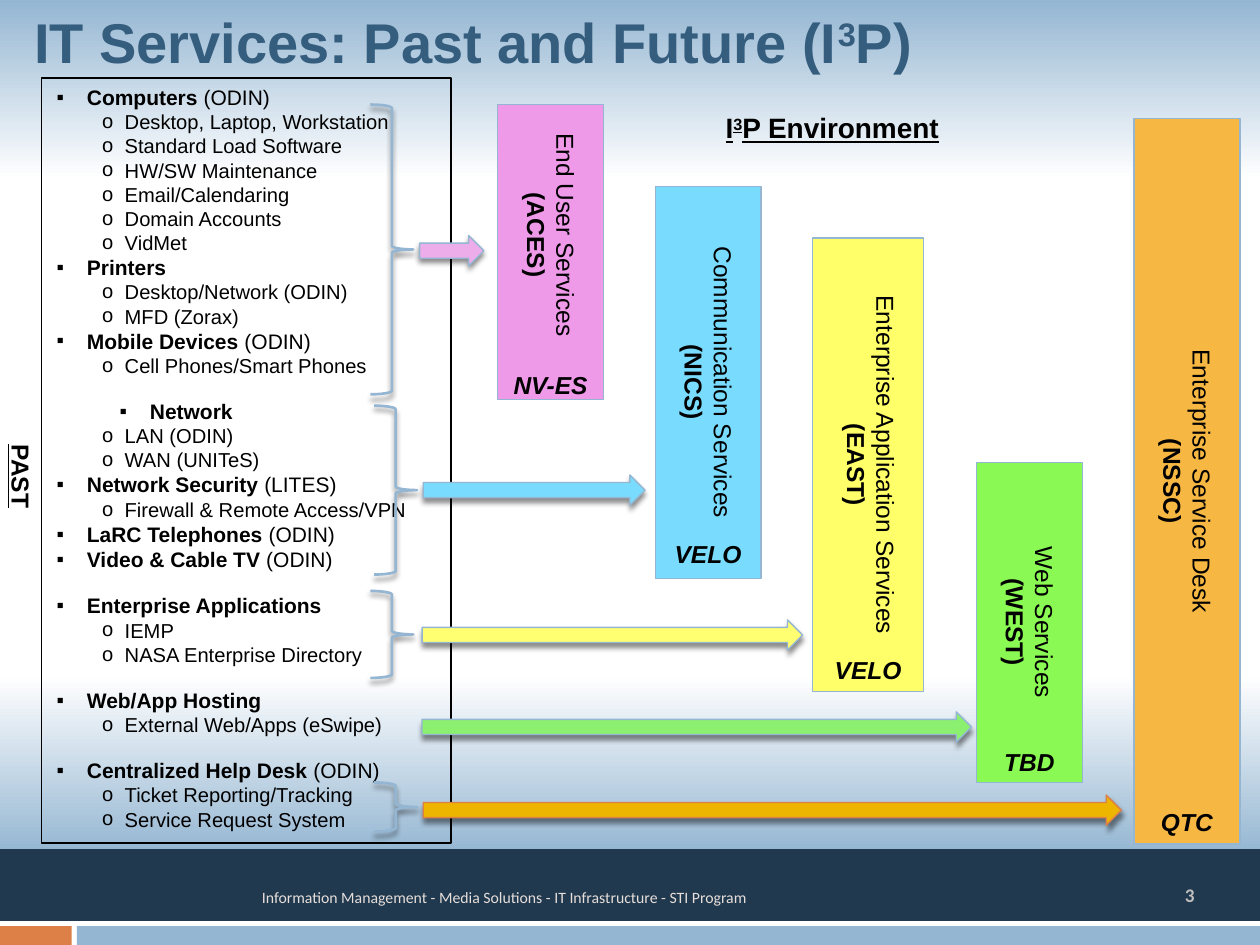
from pptx import Presentation
from pptx.dml.color import RGBColor
from pptx.enum.shapes import MSO_SHAPE as Shape
from pptx.enum.text import MSO_ANCHOR as Anchor, MSO_AUTO_SIZE as AutoSize, PP_ALIGN as Align
from pptx.oxml import parse_xml
from pptx.oxml.ns import nsdecls, qn
from pptx.util import Inches, Pt

BLUE, ORANGE, NAVY, BLACK = "94B6D2", "DD8047", "20394E", "000000"

# (heading left margin, [(heading, former provider, [services])])
PAST_GROUPS = [
    (0.26, [
        ("Computers", "(ODIN)", ["Desktop, Laptop, Workstation", "Standard Load Software",
                                 "HW/SW Maintenance", "Email/Calendaring",
                                 "Domain Accounts", "VidMet"]),
        ("Printers", "", ["Desktop/Network (ODIN)", "MFD (Zorax)"]),
        ("Mobile Devices", "(ODIN)", ["Cell Phones/Smart Phones"]),
    ]),
    (0.76, [("Network", "", ["LAN (ODIN)", "WAN (UNITeS)"])]),
    (0.26, [
        ("Network Security", "(LITES)", ["Firewall & Remote Access/VPN"]),
        ("LaRC Telephones", "(ODIN)", []),
        ("Video & Cable TV", "(ODIN)", []),
    ]),
    (0.26, [("Enterprise Applications", "", ["IEMP", "NASA Enterprise Directory"])]),
    (0.26, [("Web/App Hosting", "", ["External Web/Apps (eSwipe)"])]),
    (0.26, [("Centralized Help Desk", "(ODIN)",
             ["Ticket Reporting/Tracking", "Service Request System"])]),
]
CONTINUED = "Network Security"  # follows the group above without a gap

# (box, fill, service, acronym, provider, provider top above panel bottom, right margin)
PANELS = [
    ((3.95, 0.83, 0.84, 2.34), "EE9AE8", "End User Services", "(ACES)", "NV-ES", 0.28, 0.27),
    ((5.2, 1.48, 0.84, 3.11), "79DCFF", "Communication Services", "(NICS)", "VELO", 0.36, 0),
    ((6.45, 1.89, 0.88, 3.6), "FFFF69", "Enterprise Application Services", "(EAST)", "VELO", 0.34, 0),
    ((7.75, 3.67, 0.84, 2.54), "8AF953", "Web Services", "(WEST)", "TBD", 0.33, 0),
    ((9, 0.94, 0.84, 5.76), "F7B743", "Enterprise Service Desk", "(NSSC)", "QTC", 0.34, 0),
]
# (left, top, width, fill, line)
ARROWS = [
    (3.33, 1.87, 0.51, "EDADEA", BLUE),
    (3.36, 3.77, 1.76, "79DCFF", BLUE),
    (3.35, 4.92, 3.02, "FFFF71", BLUE),
    (3.35, 5.65, 4.36, "8BF070", BLUE),
    (3.36, 6.31, 5.54, "EEB500", ORANGE),
]
# (left, top, height)
BRACES = [(2.94, 0.83, 2.3), (2.97, 3.22, 1.34), (2.94, 4.69, 0.69), (2.97, 6.21, 0.39)]


def color(value):
    return RGBColor.from_string(value)


def inches(box):
    return [Inches(value) for value in box]


def place(shape, box):
    shape.left, shape.top, shape.width, shape.height = inches(box)


def add_block(slide, kind, box, fill=None, line=None, weight=0.75):
    shape = slide.shapes.add_shape(kind, *inches(box))
    shape.shadow.inherit = False
    if fill:
        shape.fill.solid()
        shape.fill.fore_color.rgb = color(fill)
    else:
        shape.fill.background()
    if line:
        shape.line.color.rgb = color(line)
        shape.line.width = Pt(weight)
    else:
        shape.line.fill.background()
    return shape


def set_font(paragraph, size, name="Arial", value=BLACK, **styles):
    font = paragraph.font
    font.name, font.size = name, Pt(size)
    font.color.rgb = color(value)
    for style, state in styles.items():
        setattr(font, style, state)


def add_run(paragraph, text, bold=None, raised=False):
    run = paragraph.add_run()
    run.text = text
    run.font.bold = bold
    if raised:
        run.font._element.set("baseline", "30000")


def add_label(slide, box, runs, size, align=Align.CENTER, **styles):
    """Add a one-line text box; runs is a list of (text, raised)."""
    label = slide.shapes.add_textbox(*inches(box))
    label.text_frame.word_wrap = True
    paragraph = label.text_frame.paragraphs[0]
    paragraph.alignment = align
    set_font(paragraph, size, **styles)
    for text, raised in runs:
        add_run(paragraph, text, raised=raised)
    return label


def add_drop_shadow(shape):
    effects = shape._element.spPr.find(qn("a:effectLst"))
    effects.append(parse_xml(
        f'<a:outerShdw {nsdecls("a")} blurRad="{Pt(3)}" dist="{Pt(2.4)}" dir="5400000" '
        'rotWithShape="0"><a:srgbClr val="000000"><a:alpha val="45000"/></a:srgbClr>'
        '</a:outerShdw>'))


def add_backdrop(slide):
    sky = add_block(slide, Shape.RECTANGLE, (0, 0, 10, 6.78))
    stops = "".join(
        f'<a:gs pos="{position * 1000}"><a:srgbClr val="{value}"/></a:gs>'
        for position, value in [(0, BLUE), (21, "FFFFFF"), (79, "FFFFFF"), (100, BLUE)])
    properties = sky._element.spPr
    properties.replace(properties.find(qn("a:noFill")), parse_xml(
        f'<a:gradFill {nsdecls("a")}><a:gsLst>{stops}</a:gsLst>'
        '<a:lin ang="16200000" scaled="0"/></a:gradFill>'))
    add_block(slide, Shape.RECTANGLE, (0, 6.74, 10, 0.57), NAVY)
    add_block(slide, Shape.RECTANGLE, (0.61, 7.35, 9.39, 0.15), BLUE)
    add_block(slide, Shape.RECTANGLE, (0, 7.35, 0.57, 0.15), ORANGE)
    add_label(slide, (1.98, 7, 6.88, 0.25),
              [("Information Management - Media Solutions - IT Infrastructure - STI Program", False)],
              9, Align.LEFT, name="Calibri", value="E6DEDB")
    number = add_label(slide, (9, 6.97, 0.58, 0.27), [("3", False)], 11, Align.RIGHT,
                       name="Calibri", value="BFBFBF", bold=True)
    number.text_frame.vertical_anchor = Anchor.MIDDLE


def fill_title(title, box):
    place(title, box)
    frame = title.text_frame
    frame.auto_size, frame.vertical_anchor = AutoSize.NONE, Anchor.BOTTOM
    frame.margin_bottom = Inches(0.03)
    paragraph = frame.paragraphs[0]
    paragraph.alignment = Align.LEFT
    set_font(paragraph, 32, value="355D7E", bold=True)
    add_run(paragraph, "IT Services: Past and Future (I")
    add_run(paragraph, "3", raised=True)
    add_run(paragraph, "P)")


def format_bullet(paragraph, character, margin, hanging):
    properties = paragraph._p.get_or_add_pPr()
    properties.set("marL", str(Inches(margin)))
    properties.set("indent", str(-Inches(hanging)))
    for bullet in ('buFont typeface="Arial"', f'buChar char="{character}"'):
        properties.append(parse_xml(f'<a:{bullet} {nsdecls("a")}/>'))


def fill_past_services(body, box):
    place(body, box)
    body.line.color.rgb = color(BLACK)
    body.line.width = Pt(1)
    frame = body.text_frame
    frame.auto_size, frame.vertical_anchor = AutoSize.NONE, Anchor.TOP
    paragraph = None
    for margin, headings in PAST_GROUPS:
        for index, (heading, provider, services) in enumerate(headings):
            gap = index == 0 and paragraph is not None and heading != CONTINUED
            paragraph = frame.add_paragraph() if paragraph is not None else frame.paragraphs[0]
            format_bullet(paragraph, "▪", margin, 0.24)
            paragraph.space_before = Pt(12 if gap else 0)
            set_font(paragraph, 12)
            add_run(paragraph, f"{heading} " if provider else heading, bold=True)
            if provider:
                add_run(paragraph, provider, bold=False)
            for service in services:
                paragraph = frame.add_paragraph()
                paragraph.level = 1
                format_bullet(paragraph, "o", 0.56, 0.18)
                paragraph.space_before = Pt(0)
                set_font(paragraph, 11.5)
                add_run(paragraph, service)


def add_panel(slide, box, fill, service, acronym, provider, rise, right_margin):
    """Add an upright panel turned by 90 degrees, with its provider at the foot."""
    left, top, width, height = box
    turned = (left + (width - height) / 2, top + (height - width) / 2, height, width)
    panel = add_block(slide, Shape.RECTANGLE, turned, fill, BLUE)
    panel.rotation = 90
    frame = panel.text_frame
    frame.vertical_anchor, frame.margin_top = Anchor.TOP, Inches(0.18)
    for index, text in enumerate((service, acronym)):
        paragraph = frame.add_paragraph() if index else frame.paragraphs[0]
        paragraph.alignment = Align.CENTER
        set_font(paragraph, 14, bold=index == 1)
        add_run(paragraph, text)
    if right_margin:
        frame.paragraphs[0]._p.pPr.set("marR", str(Inches(right_margin)))
    add_label(slide, (left, top + height - rise, width, 0.34), [(provider, False)], 14,
              bold=True, italic=True)


def main():
    presentation = Presentation()
    presentation.slide_width, presentation.slide_height = Inches(10), Inches(7.5)
    slide = presentation.slides.add_slide(presentation.slide_layouts[1])
    title, body = slide.placeholders
    add_backdrop(slide)
    for placeholder in (body, title):  # bring in front of the backdrop
        slide.shapes._spTree.append(placeholder._element)
    fill_past_services(body, (0.33, 0.62, 3.25, 6.07))
    fill_title(title, (0.17, 0, 9.42, 0.62))
    past = add_label(slide, (-0.21, 3.61, 0.75, 0.34), [("PAST", False)], 14,
                     bold=True, underline=True)
    past.rotation = 90
    add_label(slide, (5.49, 0.83, 2.23, 0.37),
              [("I", False), ("3", True), ("P Environment", False)], 16,
              bold=True, underline=True)
    for panel in PANELS:
        add_panel(slide, *panel)
    for left, top, width, fill, line in ARROWS:
        add_drop_shadow(add_block(slide, Shape.RIGHT_ARROW, (left, top, width, 0.24), fill, line, 0.79))
    for left, top, height in BRACES:
        add_drop_shadow(add_block(slide, Shape.RIGHT_BRACE, (left, top, 0.34, height), None, BLUE, 1.5))
    presentation.save("out.pptx")


if __name__ == "__main__":
    main()
